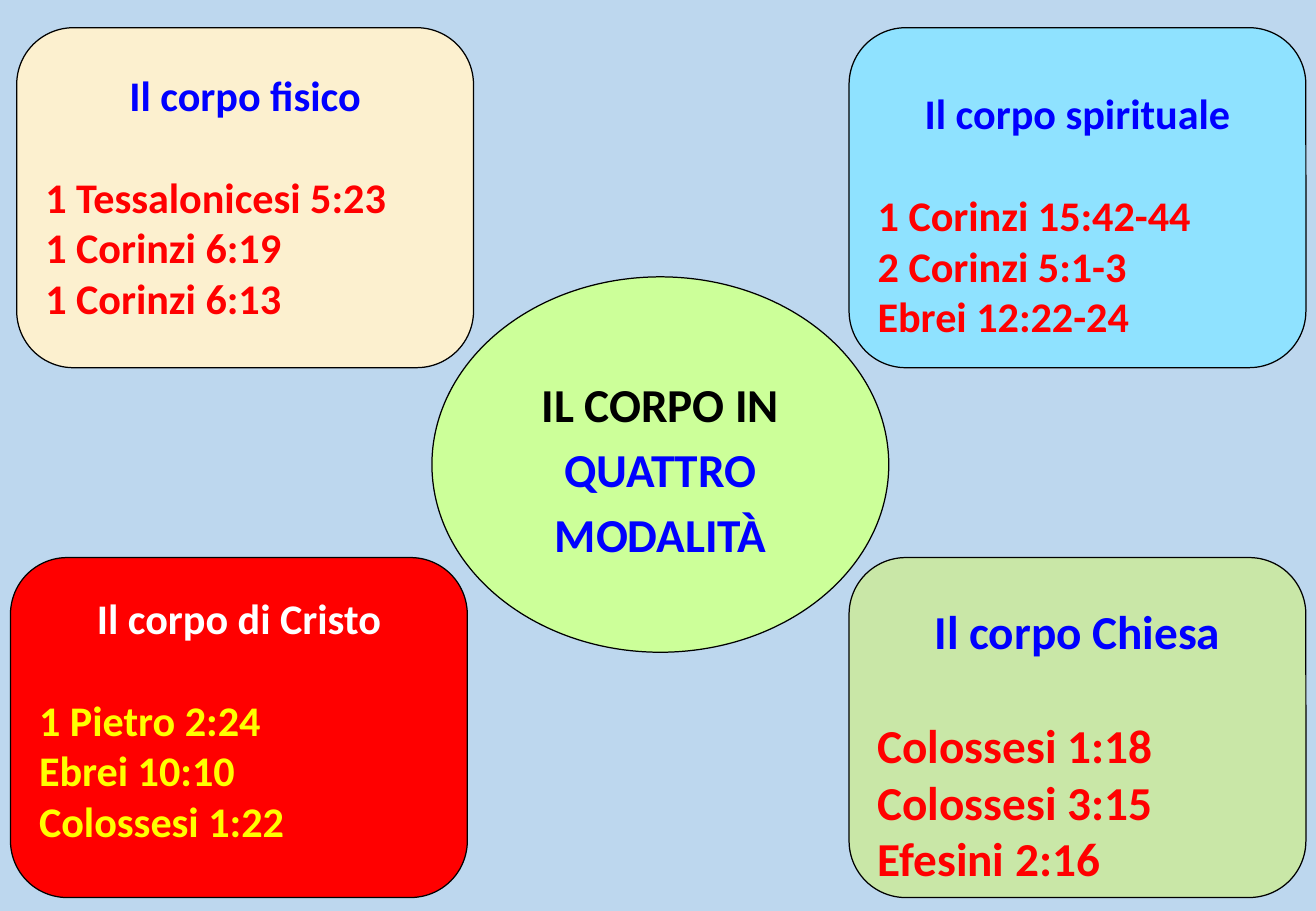
"""Build a slide on the four senses of the body, around a central ellipse."""
from pptx import Presentation
from pptx import util as u
from pptx.dml.color import RGBColor
from pptx.enum import shapes, text

SKY = RGBColor(0xBD, 0xD7, 0xEE)
LIME = RGBColor(0xCC, 0xFF, 0x99)
CREAM = RGBColor(0xFC, 0xF0, 0xCF)
AQUA = RGBColor(0x8F, 0xE2, 0xFF)
SAGE = RGBColor(0xC9, 0xE7, 0xA7)
RED = RGBColor(0xFF, 0x00, 0x00)
BLUE = RGBColor(0x00, 0x00, 0xFF)
YELLOW = RGBColor(0xFF, 0xFF, 0x00)
WHITE = RGBColor(0xFF, 0xFF, 0xFF)
BLACK = RGBColor(0x00, 0x00, 0x00)

WIDTH, BOX_HEIGHT, ELLIPSE_HEIGHT = 9.55, 7.11, 7.85
TOP_ROW, BOTTOM_ROW = 0.58, 11.66
LINE_FACTOR = 1.22


def add_panel(kind, left, top, height, fill, lines):
    sp = s.shapes.add_shape(kind, u.Cm(left), u.Cm(top), u.Cm(WIDTH), u.Cm(height))
    sp.shadow.inherit = False
    sp.fill.solid()
    sp.fill.fore_color.rgb = fill
    sp.line.color.rgb = BLACK
    sp.line.width = u.Pt(0.75)
    tf = sp.text_frame
    tf.word_wrap = True
    tf.text = "\n".join(lines)
    return sp


def style(p, size, color, align):
    p.alignment = align
    for r in p.runs:
        r.font.name = "Calibri"
        r.font.size = u.Pt(size)
        r.font.bold = True
        r.font.color.rgb = color


prs = Presentation()
prs.slide_width, prs.slide_height = u.Cm(27.51), u.Cm(19.05)
s = prs.slides.add_slide(prs.slide_layouts[6])
s.background.fill.solid()
s.background.fill.fore_color.rgb = SKY

ellipse = add_panel(shapes.MSO_SHAPE.OVAL, 9.03, 5.79, ELLIPSE_HEIGHT, LIME,
                    ["IL CORPO IN", "QUATTRO", "MODALITÀ"])
ellipse.text_frame.vertical_anchor = text.MSO_ANCHOR.MIDDLE
for p, color in zip(ellipse.text_frame.paragraphs, [BLACK, BLUE, BLUE]):
    style(p, 28, color, text.PP_ALIGN.CENTER)
    p.line_spacing = 1.15

boxes = [
    (0.35, TOP_ROW, CREAM, 25, BLUE, RED, 0.52,
     ["Il corpo fisico", "1 Tessalonicesi 5:23", "1 Corinzi 6:19", "1 Corinzi 6:13"]),
    (17.75, TOP_ROW, AQUA, 25, BLUE, RED, 0.9,
     ["Il corpo spirituale", "1 Corinzi 15:42-44", "2 Corinzi 5:1-3", "Ebrei 12:22-24"]),
    (0.22, BOTTOM_ROW, RED, 25, WHITE, YELLOW, 0.37,
     ["Il corpo di Cristo", "1 Pietro 2:24", "Ebrei 10:10", "Colossesi 1:22"]),
    (17.75, BOTTOM_ROW, SAGE, 28, BLUE, RED, 0.58,
     ["Il corpo Chiesa", "Colossesi 1:18", "Colossesi 3:15", "Efesini 2:16"]),
]
for left, top, fill, size, title_color, verse_color, inset, lines in boxes:
    box = add_panel(shapes.MSO_SHAPE.ROUNDED_RECTANGLE, left, top, BOX_HEIGHT, fill, lines)
    tf = box.text_frame
    tf.vertical_anchor = text.MSO_ANCHOR.TOP
    tf.margin_top, tf.margin_bottom = u.Cm(inset), u.Cm(0)
    title, *verses = tf.paragraphs
    style(title, size, title_color, text.PP_ALIGN.CENTER)
    title.space_after = u.Pt(round(size * LINE_FACTOR, 1))
    for p in verses:
        style(p, size, verse_color, text.PP_ALIGN.LEFT)

prs.save("out.pptx")
